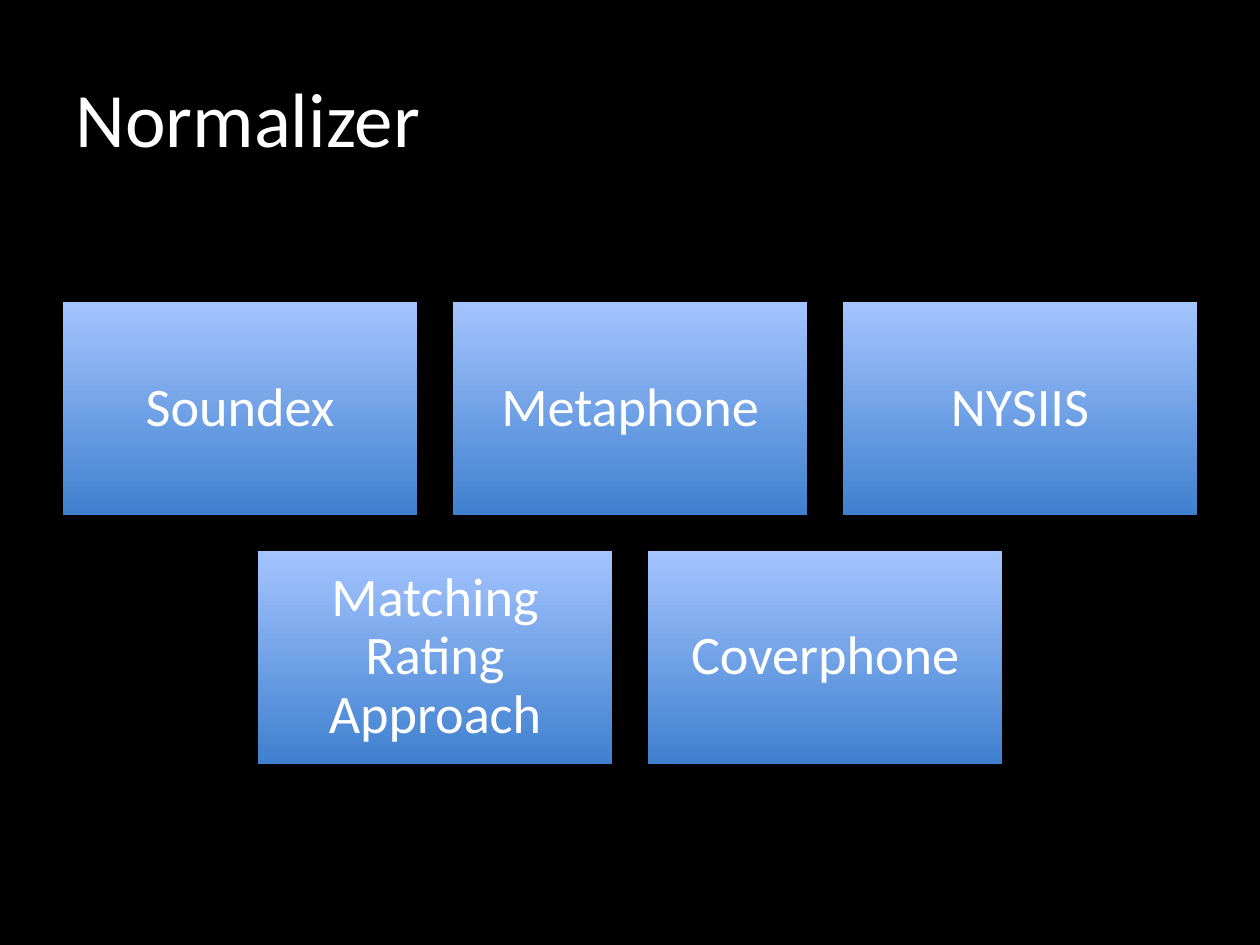
import pptx
import pptx.dml.color
import pptx.enum.shapes
import pptx.enum.text
import pptx.util

EMU_PER_PX = 914400 / 126
SLIDE_WIDTH, SLIDE_HEIGHT = 1260, 945
BOX_WIDTH, BOX_HEIGHT, GAP = 354, 213, 36
FIRST_ROW_TOP = 302
INSET = 16

BLACK = pptx.dml.color.RGBColor(0x00, 0x00, 0x00)
WHITE = pptx.dml.color.RGBColor(0xFF, 0xFF, 0xFF)
DEEP_BLUE = pptx.dml.color.RGBColor(0x3F, 0x80, 0xCE)
PALE_BLUE = pptx.dml.color.RGBColor(0xA4, 0xC4, 0xFF)

ALGORITHM_ROWS = [
    ["Soundex", "Metaphone", "NYSIIS"],
    ["Matching Rating Approach", "Coverphone"],
]


def px(length):
    return pptx.util.Emu(round(length * EMU_PER_PX))


def write(shape, text, size, alignment):
    frame = shape.text_frame
    frame.word_wrap = True
    frame.vertical_anchor = pptx.enum.text.MSO_ANCHOR.MIDDLE
    paragraph = frame.paragraphs[0]
    paragraph.alignment = alignment
    run = paragraph.add_run()
    run.text = text
    run.font.name = "Calibri"
    run.font.size = pptx.util.Pt(size)
    run.font.color.rgb = WHITE
    return paragraph


def set_title(slide, text):
    title = slide.shapes.title
    title.left, title.top = px(63), px(38)
    title.width, title.height = px(1134), px(157)
    write(title, text, 44, pptx.enum.text.PP_ALIGN.LEFT)


def add_algorithm(slide, name, left, top):
    box = slide.shapes.add_shape(
        pptx.enum.shapes.MSO_SHAPE.RECTANGLE,
        px(left), px(top), px(BOX_WIDTH), px(BOX_HEIGHT))
    box.shadow.inherit = False
    box.line.fill.background()
    box.fill.gradient()
    box.fill.gradient_angle = 90
    for stop, position, color in zip(
            box.fill.gradient_stops, (0, 1), (DEEP_BLUE, PALE_BLUE)):
        stop.position = position
        stop.color.rgb = color
    frame = box.text_frame
    frame.margin_left = frame.margin_right = px(INSET)
    frame.margin_top = frame.margin_bottom = px(INSET)
    label = write(box, name, 31, pptx.enum.text.PP_ALIGN.CENTER)
    label.line_spacing = 0.9


def add_centered_row(slide, names, top):
    row_width = len(names) * (BOX_WIDTH + GAP) - GAP
    first_left = (SLIDE_WIDTH - row_width) // 2
    for column, name in enumerate(names):
        add_algorithm(slide, name, first_left + column * (BOX_WIDTH + GAP), top)


def main():
    presentation = pptx.Presentation()
    presentation.slide_width = px(SLIDE_WIDTH)
    presentation.slide_height = px(SLIDE_HEIGHT)
    slide = presentation.slides.add_slide(presentation.slide_layouts[5])
    slide.background.fill.solid()
    slide.background.fill.fore_color.rgb = BLACK
    set_title(slide, "Normalizer")
    for row, names in enumerate(ALGORITHM_ROWS):
        add_centered_row(slide, names, FIRST_ROW_TOP + row * (BOX_HEIGHT + GAP))
    presentation.save("out.pptx")


if __name__ == "__main__":
    main()
